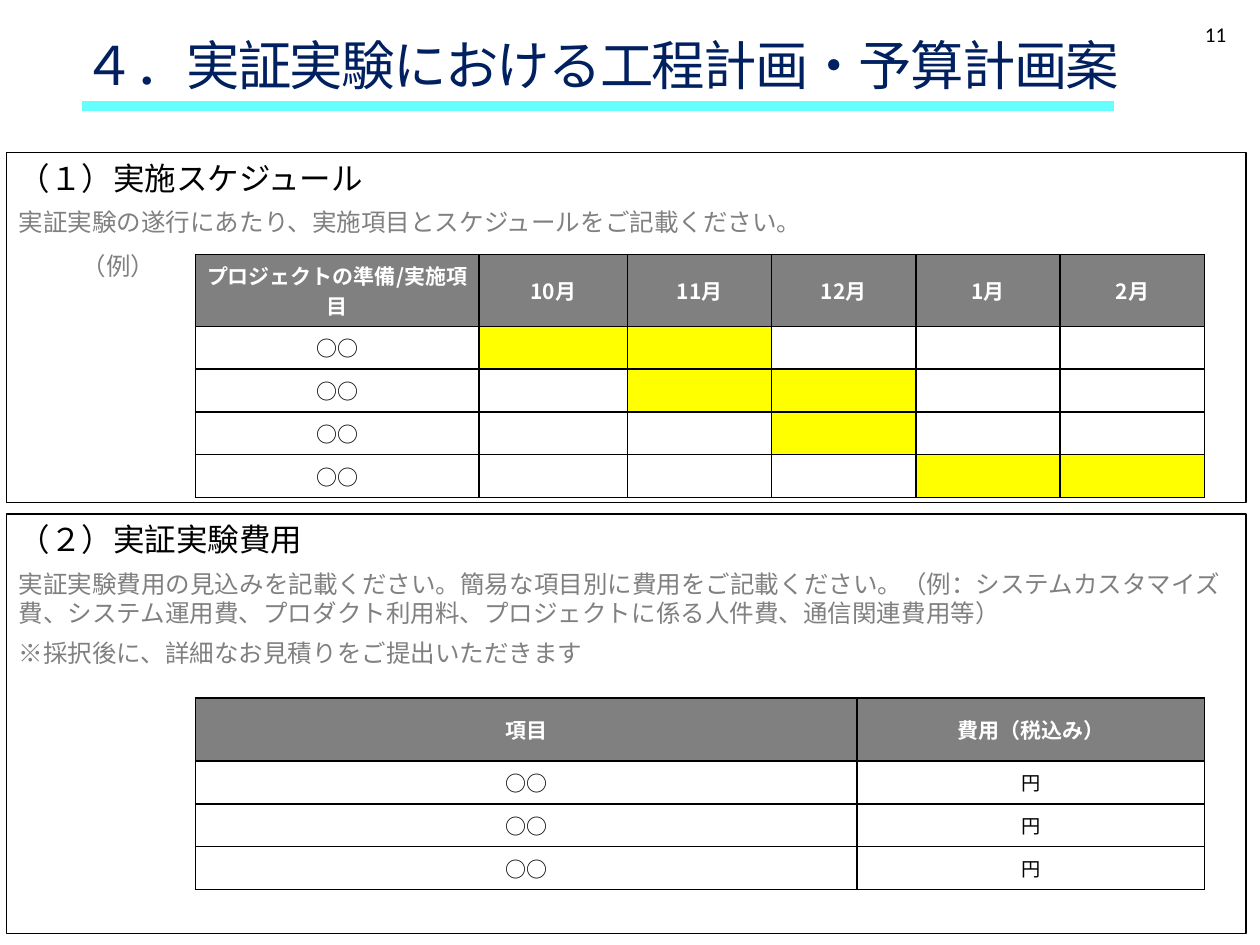
from lxml import etree
from pptx import Presentation
from pptx.dml.color import RGBColor
from pptx.enum.shapes import MSO_CONNECTOR, MSO_SHAPE
from pptx.enum.text import MSO_ANCHOR, PP_ALIGN
from pptx.oxml.ns import qn
from pptx.util import Inches, Pt

LEFT, CENTER, RIGHT = PP_ALIGN.LEFT, PP_ALIGN.CENTER, PP_ALIGN.RIGHT
TOP, MIDDLE = MSO_ANCHOR.TOP, MSO_ANCHOR.MIDDLE
RECT, STRAIGHT = MSO_SHAPE.RECTANGLE, MSO_CONNECTOR.STRAIGHT
COLORS = {"navy": "002060", "aqua": "66FFFF", "black": "000000",
          "gray": "808080", "white": "FFFFFF", "yellow": "FFFF00"}
LATIN, CJK = "Calibri", "Noto Sans CJK JP"
TABLE_W, ROW_H = 8.01, 0.34


def rgb(name):
    """Return the named colour."""
    return RGBColor.from_string(COLORS[name])


def write(p, text, size=12, color="black", font=CJK, bold=False, align=LEFT,
          spacing=None, before=0, indent=0, tracking=0):
    """Write formatted text into a paragraph."""
    p.alignment = align
    p.space_before = Pt(before)
    if spacing:
        p.line_spacing = spacing
    if indent:
        p_pr = p._p.get_or_add_pPr()
        p_pr.set("marL", str(Inches(indent)))
        p_pr.set("indent", "0")
    r = p.add_run()
    r.text = text
    r.font.size = Pt(size)
    r.font.bold = bold
    r.font.name = font
    r.font.color.rgb = rgb(color)
    r_pr = r._r.get_or_add_rPr()
    if tracking:
        r_pr.set("spc", str(round(tracking * 100)))
    if font == CJK:
        etree.SubElement(r_pr, qn("a:ea")).set("typeface", font)


def add_text(slide, box, text, **fmt):
    """Add a one-paragraph text box."""
    sp = slide.shapes.add_textbox(*map(Inches, box))
    tf = sp.text_frame
    tf.word_wrap = True
    tf.vertical_anchor = TOP
    write(tf.paragraphs[0], text, **fmt)


def add_title(slide, box, title, number):
    """Add the title, its underline and the page number."""
    x, y = box[:2]
    add_text(slide, box, title, size=30.5, color="navy", font=LATIN,
             spacing=0.9, tracking=-0.9)
    line_y = Inches(y + 0.58)
    line = slide.shapes.add_connector(
        STRAIGHT, Inches(x + 0.09), line_y, Inches(x + 8.28), line_y)
    line.line.color.rgb = rgb("aqua")
    line.line.width = Pt(6)
    etree.SubElement(line._element.spPr, qn("a:effectLst"))
    add_text(slide, (x + 7.02, y - 0.14, 2.25, 0.4), number, font=LATIN, align=RIGHT)


def add_panel(slide, box, heading, notes):
    """Add a framed section with a heading and grey notes."""
    sp = slide.shapes.add_shape(RECT, *map(Inches, box))
    sp.shadow.inherit = False
    sp.fill.background()
    sp.line.color.rgb = rgb("black")
    sp.line.width = Pt(0.75)
    tf = sp.text_frame
    tf.word_wrap = True
    tf.vertical_anchor = TOP
    write(tf.paragraphs[0], heading, size=18, before=6)
    for text, fmt in notes:
        write(tf.add_paragraph(), text,
              **{"size": 14, "color": "gray", "before": 6, **fmt})


def set_borders(cell):
    """Draw a thin black border around a cell."""
    tc_pr = cell._tc.get_or_add_tcPr()
    for i, side in enumerate(("lnL", "lnR", "lnT", "lnB")):
        ln = etree.Element(qn(f"a:{side}"), w=str(Pt(1)))
        fill = etree.SubElement(ln, qn("a:solidFill"))
        etree.SubElement(fill, qn("a:srgbClr"), val=COLORS["black"])
        tc_pr.insert(i, ln)


def fill_cell(cell, text, fill, **fmt):
    """Set the text, fill and borders of a cell."""
    cell.vertical_anchor = MIDDLE
    cell.margin_left = cell.margin_right = Inches(0.09)
    cell.margin_top = cell.margin_bottom = Inches(0.04)
    cell.fill.solid()
    cell.fill.fore_color.rgb = rgb(fill)
    set_borders(cell)
    p = cell.text_frame.paragraphs[0]
    if text:
        write(p, text, align=CENTER, **fmt)
    else:
        etree.SubElement(p._p, qn("a:endParaRPr"), sz="1200")


def add_grid(slide, x, y, widths, header, rows, header_h=0.5, marked=(), sizes=None):
    """Add a table with a grey header and yellow marked cells."""
    sizes = sizes or [12] * len(widths)
    height = header_h + ROW_H * len(rows)
    frame = slide.shapes.add_table(len(rows) + 1, len(widths), Inches(x), Inches(y),
                                   Inches(TABLE_W), Inches(height))
    table = frame.table
    for column, width in zip(table.columns, widths):
        column.width = Inches(width)
    for i, row in enumerate(table.rows):
        row.height = Inches(ROW_H if i else header_h)
    for j, text in enumerate(header):
        fill_cell(table.cell(0, j), text, "gray", color="white", bold=True)
    for i, row in enumerate(rows, 1):
        for j, text in enumerate(row):
            fill = "yellow" if (i, j) in marked else "white"
            fill_cell(table.cell(i, j), text, fill, size=sizes[j])


def add_schedule(slide, box):
    """Add the schedule section."""
    x, y = box[:2]
    add_panel(slide, box, "（１）実施スケジュール", [
        ("実証実験の遂行にあたり、実施項目とスケジュールをご記載ください。", {}),
        ("（例）", {"spacing": 0.9, "before": 10, "indent": 0.5})])
    months = [f"{m}月" for m in (10, 11, 12, 1, 2)]
    first = [2.25, 1.18]
    add_grid(slide, x + 1.5, y + 0.81, first + [(TABLE_W - sum(first)) / 4] * 4,
             ["プロジェクトの準備/実施項目"] + months,
             [["○○"] + [""] * len(months)] * 4, header_h=0.57,
             marked={(1, 1), (1, 2), (2, 2), (2, 3), (3, 3), (4, 4), (4, 5)})


def add_costs(slide, box):
    """Add the cost section."""
    x, y = box[:2]
    add_panel(slide, box, "（２）実証実験費用", [
        ("実証実験費用の見込みを記載ください。簡易な項目別に費用をご記載ください。"
         "（例：システムカスタマイズ費、システム運用費、プロダクト利用料、"
         "プロジェクトに係る人件費、通信関連費用等）", {}),
        ("※採択後に、詳細なお見積りをご提出いただきます", {})])
    add_grid(slide, x + 1.5, y + 1.46, [5.25, 2.76], ["項目", "費用（税込み）"],
             [["○○", "円"]] * 3, sizes=[12, 11])


def main():
    """Build and save the slide."""
    prs = Presentation()
    prs.slide_width, prs.slide_height = Inches(10), Inches(7.5)
    slide = prs.slides.add_slide(prs.slide_layouts[6])
    add_title(slide, (0.56, 0.26, 8.61, 0.84),
              "４．実証実験における工程計画・予算計画案", "11")
    add_schedule(slide, (0.05, 1.21, 9.84, 2.78))
    add_costs(slide, (0.05, 4.08, 9.84, 3.33))
    prs.save("out.pptx")


if __name__ == "__main__":
    main()
